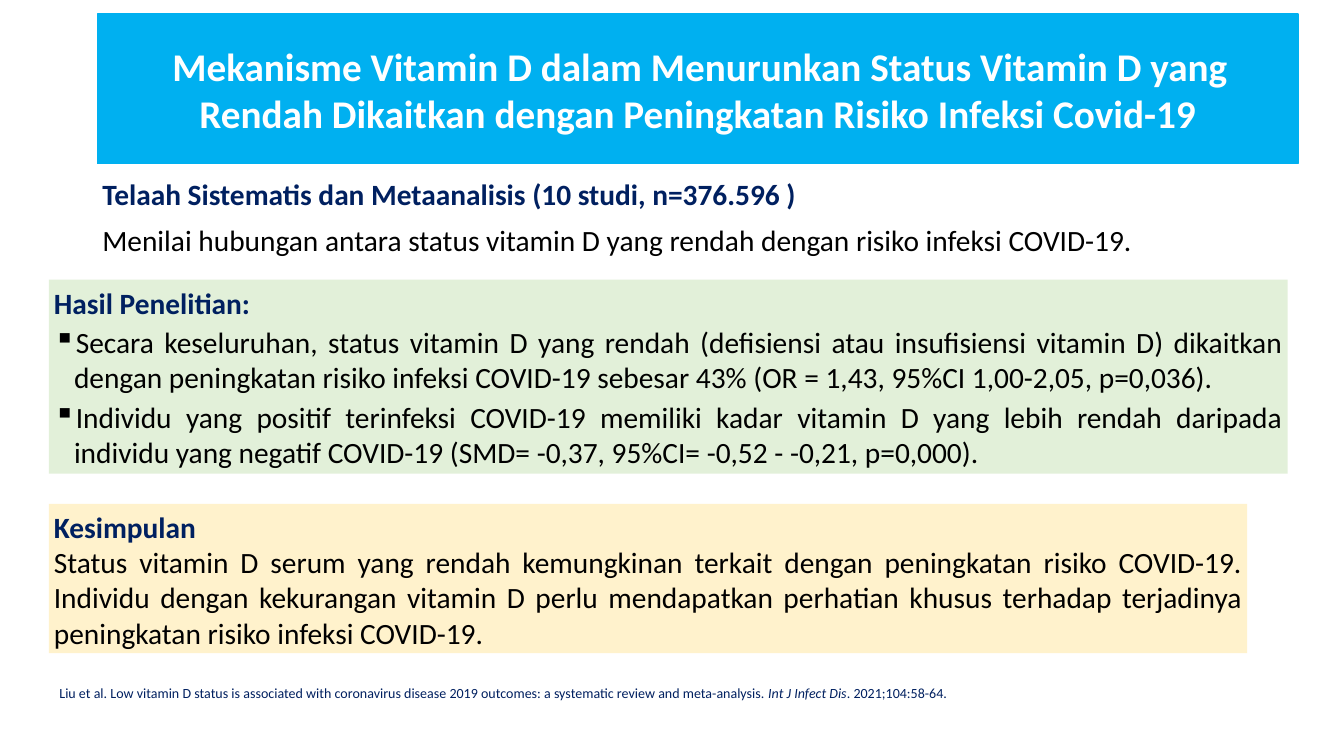
from dataclasses import dataclass

from lxml.etree import SubElement
from pptx import Presentation
from pptx.dml.color import RGBColor
from pptx.enum.shapes import MSO_SHAPE as Shape
from pptx.enum.text import MSO_ANCHOR as Anchor
from pptx.enum.text import MSO_AUTO_SIZE as AutoSize
from pptx.enum.text import PP_ALIGN as Align
from pptx.oxml.ns import qn
from pptx.util import Inches, Pt

COLORS = {
    "navy": "002060",
    "black": "000000",
    "white": "FFFFFF",
    "blue": "00B0F0",
    "green": "E2F0D9",
    "cream": "FFF2CC",
}
FONT = "Calibri"
INSET = Inches(0.1)


@dataclass(frozen=True)
class Span:
    text: str
    color: str = "black"
    size: float = 42
    bold: bool = False
    italic: bool = False


@dataclass(frozen=True)
class Para:
    spans: tuple[Span, ...]
    align: Align = Align.JUSTIFY
    before: float = 0
    spacing: float = 1.0
    margin: float = 0
    indent: float = 0
    bullet: str = ""


@dataclass(frozen=True)
class Place:
    left: float
    top: float
    width: float
    height: float

    def lengths(self) -> tuple:
        return tuple(Inches(n) for n in (self.left, self.top, self.width, self.height))


@dataclass(frozen=True)
class Panel:
    place: Place
    fill: str
    paras: tuple[Para, ...]


def heading(text: str, **layout) -> Para:
    return Para((Span(text, "navy", bold=True),), **layout)


def plain(text: str, **layout) -> Para:
    return Para((Span(text),), **layout)


BULLET = {"before": 6, "margin": 0.4, "indent": -0.4, "bullet": "▪"}
INTRO = {"before": 20, "spacing": 0.9}

TITLE = Para(
    (Span("Mekanisme Vitamin D dalam Menurunkan Status Vitamin D yang Rendah "
          "Dikaitkan dengan Peningkatan Risiko Infeksi Covid-19", "white", 56, True),),
    Align.CENTER, indent=0.09)

STUDY = (
    heading("Telaah Sistematis dan Metaanalisis (10 studi, n=376.596 )", **INTRO),
    plain("Menilai hubungan antara status vitamin D yang rendah dengan risiko "
          "infeksi COVID-19.", **INTRO),
)

PANELS = (
    Panel(Place(0.97, 5.55, 24.58, 3.85), "green", (
        heading("Hasil Penelitian:", before=6),
        plain("Secara keseluruhan, status vitamin D yang rendah (defisiensi atau "
              "insufisiensi vitamin D) dikaitkan dengan peningkatan risiko infeksi "
              "COVID-19 sebesar 43% (OR = 1,43, 95%CI 1,00-2,05, p=0,036).", **BULLET),
        plain("Individu yang positif terinfeksi COVID-19 memiliki kadar vitamin D "
              "yang lebih rendah daripada individu yang negatif COVID-19 "
              "(SMD= -0,37, 95%CI= -0,52 - -0,21, p=0,000).", **BULLET),
    )),
    Panel(Place(0.97, 10, 23.78, 2.96), "cream", (
        heading("Kesimpulan"),
        plain("Status vitamin D serum yang rendah kemungkinan terkait dengan "
              "peningkatan risiko COVID-19. Individu dengan kekurangan vitamin D "
              "perlu mendapatkan perhatian khusus terhadap terjadinya peningkatan "
              "risiko infeksi COVID-19."),
    )),
)

CITATION = Para((
    Span("Liu et al. Low vitamin D status is associated with coronavirus disease 2019 "
         "outcomes: a systematic review and meta-analysis. ", "navy", 20),
    Span("Int J Infect Dis", "navy", 20, italic=True),
    Span(". 2021;104:58-64.", "navy", 20),
))


def rgb(name: str) -> RGBColor:
    return RGBColor.from_string(COLORS[name])


def set_all(target, values: dict) -> None:
    for name, value in values.items():
        setattr(target, name, value)


def place_shape(shape, place: Place) -> None:
    set_all(shape, dict(zip(("left", "top", "width", "height"), place.lengths())))


def write(shape, paras: tuple[Para, ...], anchor: Anchor = Anchor.TOP) -> None:
    frame = shape.text_frame
    set_all(frame, {
        "word_wrap": True, "auto_size": AutoSize.NONE, "vertical_anchor": anchor,
        "margin_left": INSET, "margin_right": INSET,
        "margin_top": INSET, "margin_bottom": INSET,
    })
    for index, para in enumerate(paras):
        line = frame.add_paragraph() if index else frame.paragraphs[0]
        set_all(line, {
            "alignment": para.align, "line_spacing": para.spacing,
            "space_before": Pt(para.before), "space_after": Pt(0),
        })
        properties = line._p.get_or_add_pPr()
        properties.set("marL", str(Inches(para.margin)))
        properties.set("indent", str(Inches(para.indent)))
        if para.bullet:
            SubElement(properties, qn("a:buChar")).set("char", para.bullet)
        else:
            SubElement(properties, qn("a:buNone"))
        for span in para.spans:
            run = line.add_run()
            run.text = span.text
            set_all(run.font, {
                "name": FONT, "size": Pt(span.size),
                "bold": span.bold, "italic": span.italic,
            })
            run.font.color.rgb = rgb(span.color)


def add_rectangle(page, place: Place, fill: str, outlined: bool = False):
    box = page.shapes.add_shape(Shape.RECTANGLE, *place.lengths())
    box.shadow.inherit = False
    box.fill.solid()
    box.fill.fore_color.rgb = rgb(fill)
    if outlined:
        box.line.color.rgb = rgb(fill)
        box.line.width = Pt(2)
    else:
        box.line.fill.background()
    return box


def main() -> None:
    deck = Presentation()
    set_all(deck, {"slide_width": Inches(26.67), "slide_height": Inches(15)})
    page = deck.slides.add_slide(deck.slide_layouts[1])

    body = page.placeholders[1]
    place_shape(body, Place(1.93, 3.48, 24.73, 9.55))
    write(body, STUDY)

    for panel in PANELS:
        write(add_rectangle(page, panel.place, panel.fill), panel.paras)

    citation = page.shapes.add_textbox(*Place(1.08, 13.49, 18.38, 0.47).lengths())
    write(citation, (CITATION,))

    banner = add_rectangle(page, Place(1.93, 0.28, 23.83, 2.97), "blue", outlined=True)
    title = page.shapes.title
    place_shape(title, Place(2.05, 0.81, 23.61, 1.92))
    write(title, (TITLE,), Anchor.MIDDLE)
    banner.element.addnext(title.element)

    deck.save("out.pptx")


if __name__ == "__main__":
    main()
